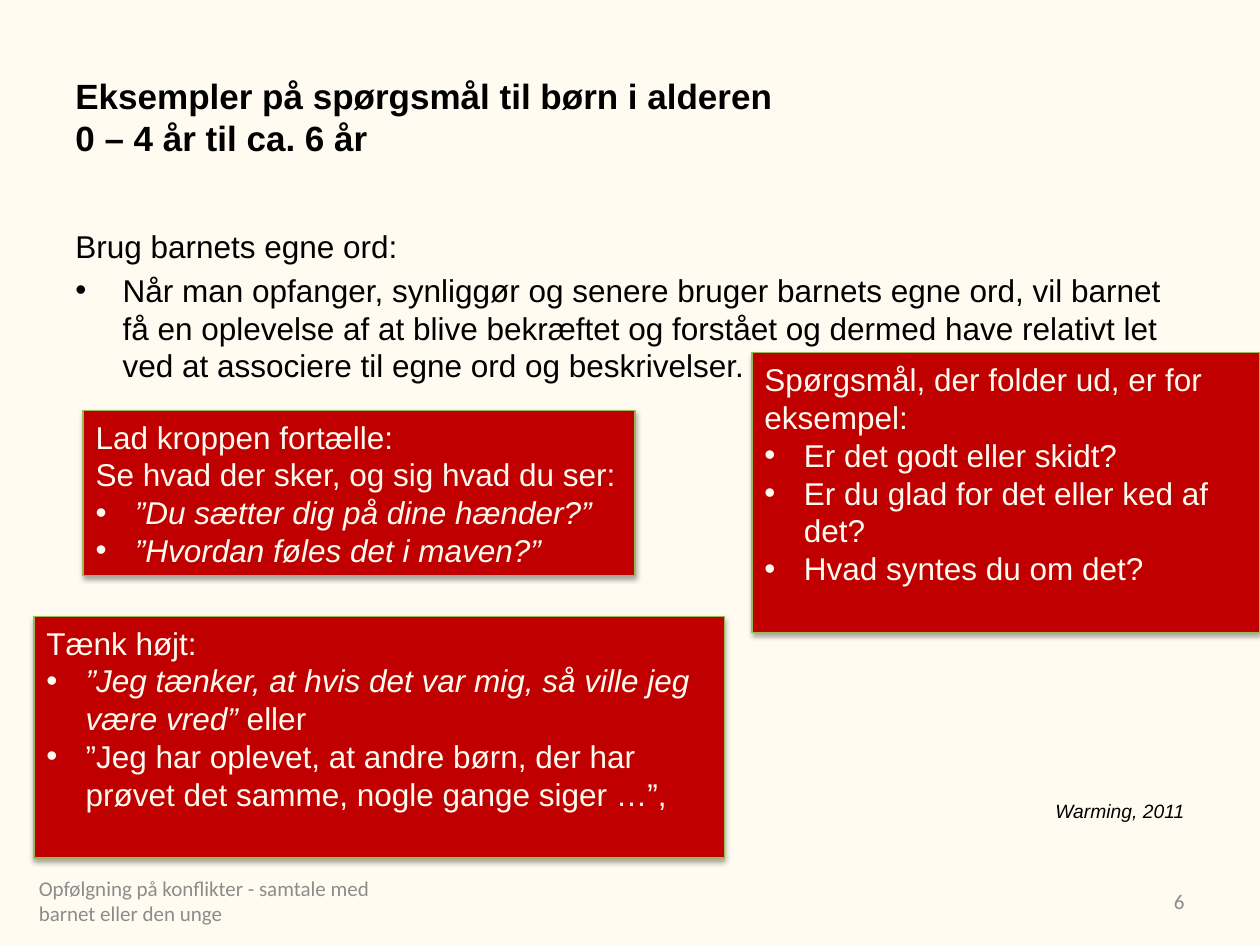
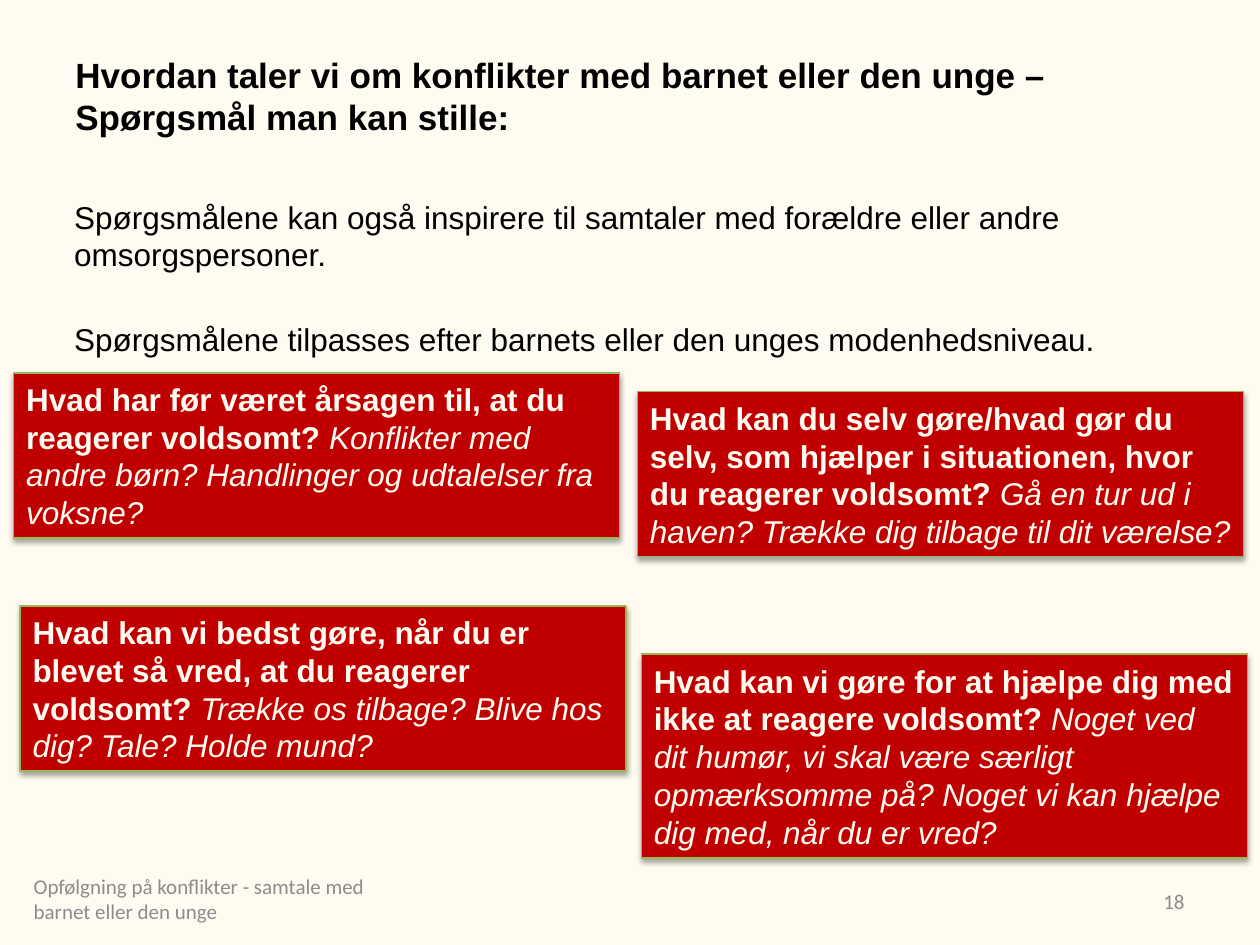
import dataclasses
import typing

import pptx
import pptx.dml.color
import pptx.enum.shapes
import pptx.enum.text
import pptx.oxml
import pptx.oxml.ns
import pptx.shapes.autoshape
import pptx.slide
import pptx.util

Pt = pptx.util.Pt
RGBColor = pptx.dml.color.RGBColor
ALIGN = pptx.enum.text.PP_ALIGN
ANCHOR = pptx.enum.text.MSO_ANCHOR

# Shared colours and text formats
CREAM = RGBColor(0xFF, 0xFB, 0xF0)
BLACK = RGBColor(0x00, 0x00, 0x00)
RED = RGBColor(0xC0, 0x00, 0x00)
GREEN = RGBColor(0x98, 0xB9, 0x55)
GREY = RGBColor(0x8C, 0x8C, 0x8C)

TITLE = {"name": "Arial", "size": Pt(20), "bold": True}
BODY = {"name": "Arial", "size": Pt(18)}
FOOTER = {"name": "Calibri", "size": Pt(12)}
ITALIC = {"italic": True}
BOLD = {"bold": True}
SOURCE = {"size": Pt(11), "italic": True}

FOOTER_TEXT = "Opfølgning på konflikter - samtale med barnet eller den unge"
BODY_GAP = 3.6
BODY_INDENT = 27
CARD_INDENT = 22.5
CARD_LINE = 21.6
TITLE_LINE = 24
INSET = 3.6


class Area(typing.NamedTuple):
    left: float
    top: float
    width: float
    height: float

    def lengths(self) -> list[pptx.util.Length]:
        return [Pt(value) for value in self]


class Run(typing.NamedTuple):
    text: str
    style: dict[str, typing.Any] = {}


@dataclasses.dataclass(frozen=True)
class Line:
    """One paragraph; an indent above zero gives it a bullet."""
    runs: tuple[Run, ...]
    indent: float = 0
    before: float = 0
    align: ALIGN = ALIGN.LEFT


@dataclasses.dataclass(frozen=True)
class Card:
    area: Area
    lines: tuple[Line, ...]
    space_below: float = 0


@dataclasses.dataclass(frozen=True)
class Page:
    number: str
    title: tuple[str, ...]
    body_area: Area
    body: tuple[Line, ...]
    cards: tuple[Card, ...]
    footer_left: float
    footer_top: float
    title_space_below: float = 0


def plain(text: str, **layout: typing.Any) -> Line:
    return Line((Run(text),), **layout)


def bullet(text: str, style: dict[str, typing.Any] | None = None) -> Line:
    return Line((Run(text, style or {}),), indent=CARD_INDENT)


def question(area: Area, ask: str, examples: str) -> Card:
    return Card(area, (Line((Run(ask + " ", BOLD), Run(examples, ITALIC))),))


def add_bullet(paragraph: typing.Any, indent: float) -> None:
    properties = paragraph._p.get_or_add_pPr()
    properties.set("marL", str(Pt(indent)))
    properties.set("indent", str(-Pt(indent)))
    for tag, attribute, value in (("a:buFont", "typeface", "Arial"),
                                  ("a:buChar", "char", "•")):
        mark = pptx.oxml.parse_xml(f"<{tag} {pptx.oxml.ns.nsdecls('a')}/>")
        mark.set(attribute, value)
        properties.append(mark)


def write(shape: pptx.shapes.autoshape.Shape, lines: typing.Sequence[Line],
          base: dict[str, typing.Any], color: RGBColor,
          anchor: ANCHOR = ANCHOR.MIDDLE, space_below: float = 0) -> None:
    frame = shape.text_frame
    settings = {"word_wrap": True, "vertical_anchor": anchor,
                "margin_bottom": Pt(INSET + space_below)}
    for name, value in settings.items():
        setattr(frame, name, value)
    for index, line in enumerate(lines):
        paragraph = frame.add_paragraph() if index else frame.paragraphs[0]
        paragraph.alignment = line.align
        paragraph.space_before = Pt(line.before)
        if line.indent:
            add_bullet(paragraph, line.indent)
        for part in line.runs:
            run = paragraph.add_run()
            run.text = part.text
            for name, value in (base | part.style).items():
                setattr(run.font, name, value)
            run.font.color.rgb = color


def add_text(slide: pptx.slide.Slide, area: Area, lines: typing.Sequence[Line],
             base: dict[str, typing.Any], color: RGBColor,
             **placing: typing.Any) -> None:
    write(slide.shapes.add_textbox(*area.lengths()), lines, base, color, **placing)


def add_card(slide: pptx.slide.Slide, card: Card) -> None:
    panel = slide.shapes.add_shape(
        pptx.enum.shapes.MSO_SHAPE.RECTANGLE, *card.area.lengths())
    panel.fill.solid()
    panel.fill.fore_color.rgb = RED
    panel.line.color.rgb = GREEN
    panel.line.width = Pt(0.75)
    # Soft shadow straight below the card
    panel.shadow.inherit = False
    effects = panel._element.spPr.find(pptx.oxml.ns.qn("a:effectLst"))
    effects.append(pptx.oxml.parse_xml(
        f'<a:outerShdw {pptx.oxml.ns.nsdecls("a")} blurRad="{Pt(3.1)}" '
        f'dist="{Pt(1.8)}" dir="5400000" rotWithShape="0">'
        '<a:srgbClr val="000000"><a:alpha val="35000"/></a:srgbClr>'
        '</a:outerShdw>'))
    write(panel, card.lines, BODY, CREAM, space_below=card.space_below)


def add_page(deck: typing.Any, page: Page) -> None:
    slide = deck.slides.add_slide(deck.slide_layouts[6])
    slide.background.fill.solid()
    slide.background.fill.fore_color.rgb = CREAM
    add_text(slide, Area(36, 21.6, 648, 90), [plain(row) for row in page.title],
             TITLE, BLACK, space_below=page.title_space_below)
    add_text(slide, page.body_area, page.body, BODY, BLACK, anchor=ANCHOR.TOP)
    for card in page.cards:
        add_card(slide, card)
    # Page number and footer
    add_text(slide, Area(516.2, 500.4, 167.8, 28.8),
             [plain(page.number, align=ALIGN.RIGHT)], FOOTER, GREY)
    add_text(slide, Area(page.footer_left, page.footer_top, 228.2, 28.8),
             [plain(FOOTER_TEXT)], FOOTER, GREY)


YOUNG_CHILDREN = Page(
    number="6",
    title=("Eksempler på spørgsmål til børn i alderen", "0 – 4 år til ca. 6 år"),
    body_area=Area(36, 126, 648, 356.4),
    body=(
        plain("Brug barnets egne ord:"),
        plain("Når man opfanger, synliggør og senere bruger barnets egne ord, "
              "vil barnet få en oplevelse af at blive bekræftet og forstået og "
              "dermed have relativt let ved at associere til egne ord og "
              "beskrivelser.", indent=BODY_INDENT, before=BODY_GAP),
        Line((Run("Warming, 2011", SOURCE),), before=237, align=ALIGN.RIGHT),
    ),
    cards=(
        Card(Area(47.5, 234.7, 315.4, 94.3), (
            plain("Lad kroppen fortælle:"),
            plain("Se hvad der sker, og sig hvad du ser:"),
            bullet("”Du sætter dig på dine hænder?”", ITALIC),
            bullet("”Hvordan føles det i maven?”", ITALIC))),
        Card(Area(19.4, 352.1, 394.6, 138.2), (
            plain("Tænk højt:"),
            Line((Run("”Jeg tænker, at hvis det var mig, så ville jeg være vred” ",
                      ITALIC), Run("eller")), indent=CARD_INDENT),
            bullet("”Jeg har oplevet, at andre børn, der har prøvet det samme, "
                   "nogle gange siger …”,")), space_below=CARD_LINE),
        Card(Area(429.8, 201.6, 290.2, 159.8), (
            plain("Spørgsmål, der folder ud, er for eksempel:"),
            bullet("Er det godt eller skidt?"),
            bullet("Er du glad for det eller ked af det?"),
            bullet("Hvad syntes du om det?")), space_below=CARD_LINE),
    ),
    footer_left=15.1,
    footer_top=500.4,
)

CARD_WIDTH = 346.3
CONFLICTS = Page(
    number="18",
    title=("Hvordan taler vi om konflikter med barnet eller den unge – "
           "Spørgsmål man kan stille:",),
    title_space_below=TITLE_LINE,
    body_area=Area(35.3, 109.4, 649.4, 362.2),
    body=(
        plain("Spørgsmålene kan også inspirere til samtaler med forældre eller "
              "andre omsorgspersoner."),
        plain("Spørgsmålene tilpasses efter barnets eller den unges "
              "modenhedsniveau.", before=26.5),
    ),
    cards=(
        question(Area(364.3, 223.9, CARD_WIDTH, 94.3),
                 "Hvad kan du selv gøre/hvad gør du selv, som hjælper i "
                 "situationen, hvor du reagerer voldsomt?",
                 "Gå en tur ud i haven? Trække dig tilbage til dit værelse?"),
        question(Area(366.5, 373.7, CARD_WIDTH, 116.6),
                 "Hvad kan vi gøre for at hjælpe dig med ikke at reagere voldsomt?",
                 "Noget ved dit humør, vi skal være særligt opmærksomme på? "
                 "Noget vi kan hjælpe dig med, når du er vred?"),
        question(Area(11.5, 346.3, CARD_WIDTH, 94.3),
                 "Hvad kan vi bedst gøre, når du er blevet så vred, at du "
                 "reagerer voldsomt?",
                 "Trække os tilbage? Blive hos dig? Tale? Holde mund?"),
        question(Area(7.9, 213.1, CARD_WIDTH, 94.3),
                 "Hvad har før været årsagen til, at du reagerer voldsomt?",
                 "Konflikter med andre børn? Handlinger og udtalelser fra voksne?"),
    ),
    footer_left=12.2,
    footer_top=499,
)


def main() -> None:
    deck = pptx.Presentation()
    deck.slide_width, deck.slide_height = Pt(720), Pt(540)
    for page in (YOUNG_CHILDREN, CONFLICTS):
        add_page(deck, page)
    deck.save("out.pptx")


if __name__ == "__main__":
    main()
